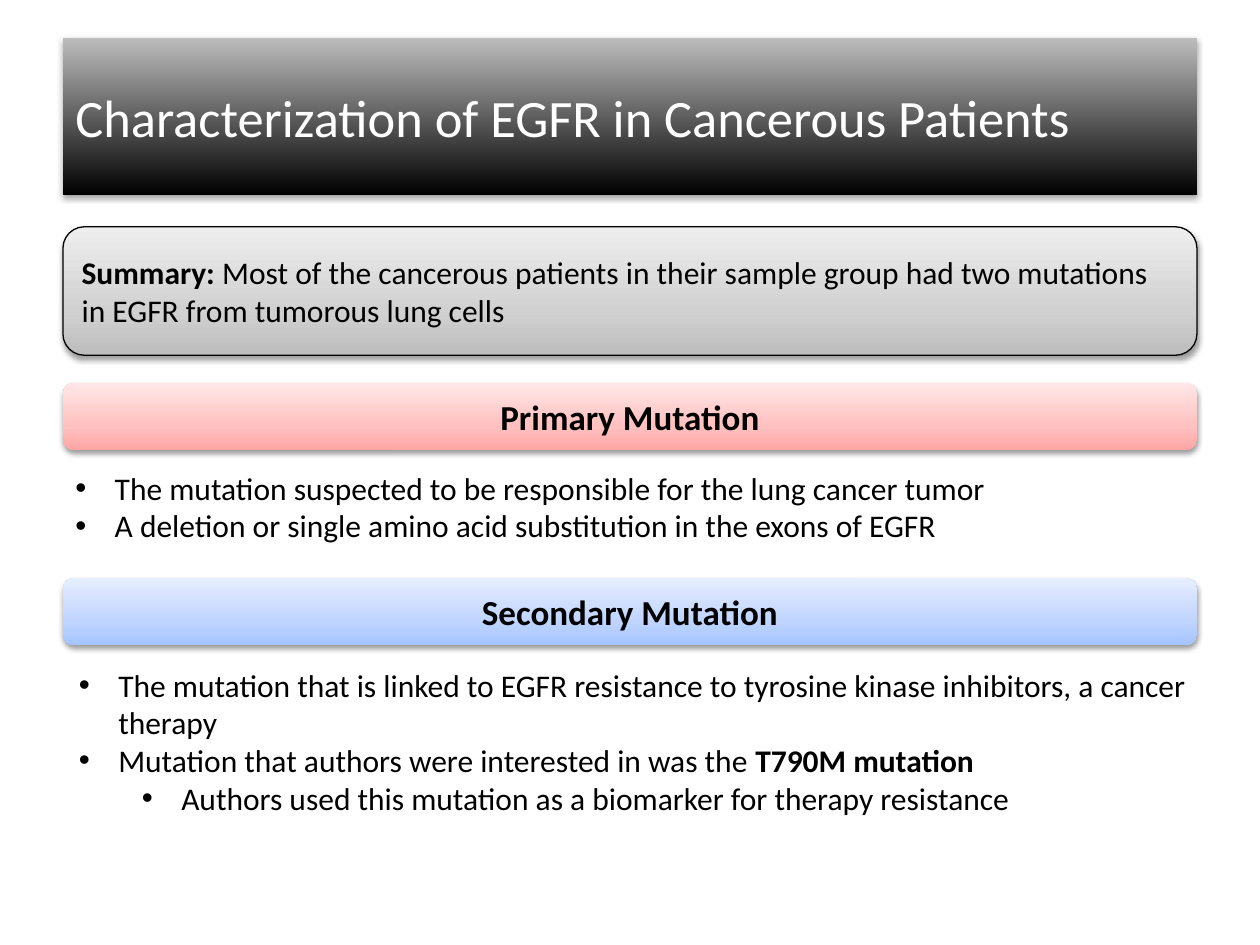
import pptx
import pptx.dml.color
import pptx.enum.shapes
import pptx.enum.text
import pptx.oxml
import pptx.oxml.ns
import pptx.util

Pt = pptx.util.Pt
SHAPES = pptx.enum.shapes.MSO_SHAPE
ALIGN = pptx.enum.text.PP_ALIGN
ANCHOR = pptx.enum.text.MSO_ANCHOR
FIT = pptx.enum.text.MSO_AUTO_SIZE
qn = pptx.oxml.ns.qn
NS = pptx.oxml.ns.nsdecls("a")

LEFT, WIDTH = 36, 648
INDENT = 22.5
BODY = {"name": "Calibri", "size": Pt(18), "bold": False}
STRONG = {**BODY, "bold": True}
HEADING = {**STRONG, "size": Pt(20)}
TITLE = {**BODY, "size": Pt(30)}


def rgb(hex_color):
    return pptx.dml.color.RGBColor.from_string(hex_color)


def add_run(paragraph, text, style, color="000000"):
    run = paragraph.add_run()
    run.text = text
    for attribute, value in style.items():
        setattr(run.font, attribute, value)
    run.font.color.rgb = rgb(color)


def fill_upwards(shape, stops):
    """Fill with a gradient whose stops run from the bottom to the top."""
    shape.fill.gradient()
    shape.fill.gradient_angle = 90
    stop_list = shape.fill._fill._gradFill.find(qn("a:gsLst"))
    for stop in list(stop_list):
        stop_list.remove(stop)
    for percent, color in stops:
        stop_list.append(pptx.oxml.parse_xml(
            f'<a:gs {NS} pos="{percent * 1000}"><a:srgbClr val="{color}"/></a:gs>'))


def add_shadow(shape, distance, opacity):
    shape.shadow.inherit = False
    effects = shape._element.spPr.find(qn("a:effectLst"))
    effects.append(pptx.oxml.parse_xml(
        f'<a:outerShdw {NS} blurRad="{Pt(3.1)}" dist="{Pt(distance)}" '
        f'dir="5400000" rotWithShape="0"><a:srgbClr val="000000">'
        f'<a:alpha val="{opacity * 1000}"/></a:srgbClr></a:outerShdw>'))


def add_panel(slide, box, kind, stops, align, distance=1.6, opacity=38):
    """Draw a shaded panel and return its first paragraph."""
    panel = slide.shapes.add_shape(kind, *map(Pt, box))
    fill_upwards(panel, stops)
    panel.line.fill.background()
    add_shadow(panel, distance, opacity)
    panel.text_frame.word_wrap = True
    panel.text_frame.vertical_anchor = ANCHOR.MIDDLE
    paragraph = panel.text_frame.paragraphs[0]
    paragraph.alignment = align
    return panel, paragraph


def add_title(slide, box, text):
    stops = [(0, "000000"), (100, "BDBDBD")]
    _, paragraph = add_panel(slide, box, SHAPES.RECTANGLE, stops, ALIGN.LEFT, 1.8, 35)
    add_run(paragraph, text, TITLE, "FFFFFF")


def add_summary(slide, box, label, text):
    stops = [(0, "BDBDBD"), (35, "D1D1D1"), (100, "EEEEEE")]
    panel, paragraph = add_panel(slide, box, SHAPES.ROUNDED_RECTANGLE, stops, ALIGN.LEFT)
    panel.line.color.rgb = rgb("000000")
    panel.line.width = Pt(0.75)
    add_run(paragraph, label, STRONG)
    add_run(paragraph, text, BODY)


def add_heading(slide, box, text, colors):
    stops = zip((0, 35, 100), colors)
    _, paragraph = add_panel(slide, box, SHAPES.ROUNDED_RECTANGLE, stops, ALIGN.CENTER)
    add_run(paragraph, text, HEADING)


def add_bullets(slide, box, items):
    """Each item is a level and its runs of text and style."""
    frame = slide.shapes.add_textbox(*map(Pt, box)).text_frame
    frame.word_wrap = True
    frame.auto_size = FIT.SHAPE_TO_FIT_TEXT
    for index, (level, runs) in enumerate(items):
        paragraph = frame.add_paragraph() if index else frame.paragraphs[0]
        paragraph.level = level
        properties = paragraph._p.get_or_add_pPr()
        properties.set("marL", str(Pt(INDENT + 36 * level)))
        properties.set("indent", str(-Pt(INDENT)))
        for bullet in ('buFont {} typeface="Arial"', 'buChar {} char="•"'):
            properties.append(pptx.oxml.parse_xml(f"<a:{bullet.format(NS)}/>"))
        for text, style in runs:
            add_run(paragraph, text, style)


def main():
    deck = pptx.Presentation()
    deck.slide_width, deck.slide_height = Pt(720), Pt(540)
    slide = deck.slides.add_slide(deck.slide_layouts[6])

    # Title and summary
    add_title(slide, (LEFT, 21.6, WIDTH, 90),
              "Characterization of EGFR in Cancerous Patients")
    add_summary(slide, (LEFT, 129.6, WIDTH, 73.4), "Summary: ",
                "Most of the cancerous patients in their sample group had two "
                "mutations in EGFR from tumorous lung cells")

    # Primary mutation
    add_heading(slide, (LEFT, 218.9, WIDTH, 38.4), "Primary Mutation",
                ("FFA6A5", "FFC0BF", "FFE7E7"))
    add_bullets(slide, (LEFT, 264.2, WIDTH, 51), [
        (0, [("The mutation suspected to be responsible for the lung cancer tumor", BODY)]),
        (0, [("A deletion or single amino acid substitution in the exons of EGFR", BODY)]),
    ])

    # Secondary mutation
    add_heading(slide, (LEFT, 330.4, WIDTH, 38.4), "Secondary Mutation",
                ("A4C4FF", "BFD4FF", "E6EEFF"))
    add_bullets(slide, (LEFT + 2, 376.8, WIDTH, 94.4), [
        (0, [("The mutation that is linked to EGFR resistance to tyrosine kinase "
              "inhibitors, a cancer therapy", BODY)]),
        (0, [("Mutation that authors were interested in was the ", BODY),
             ("T790M mutation", STRONG)]),
        (1, [("Authors used this mutation as a biomarker for therapy resistance", BODY)]),
    ])

    deck.save("out.pptx")


if __name__ == "__main__":
    main()
